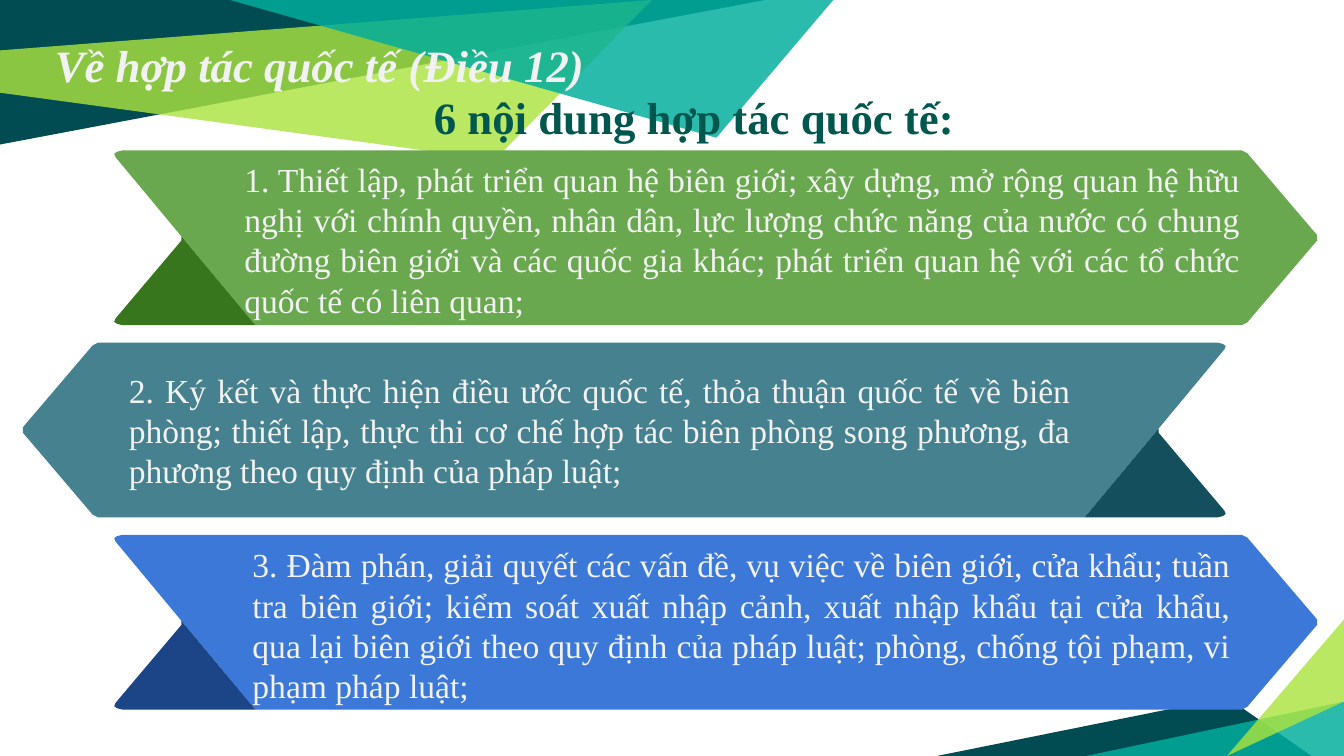
from lxml.etree import SubElement
from pptx import Presentation
from pptx.dml.color import RGBColor
from pptx.enum.text import PP_ALIGN
from pptx.oxml.ns import qn
from pptx.util import Inches, Pt

COLS, ROWS = 100, 56.25
CELL = Inches(0.1)
PINE = RGBColor(0x00, 0x4C, 0x52)
LIME = RGBColor(0xAB, 0xE3, 0x3F)
TEAL = RGBColor(0x00, 0xAE, 0x9D)
PALE = RGBColor(0xF2, 0xF2, 0xF2)
DEEP = RGBColor(0x00, 0x57, 0x4E)
GREEN = RGBColor(0x6A, 0xA8, 0x4F)
MOSS = RGBColor(0x38, 0x76, 0x1D)
SLATE = RGBColor(0x45, 0x81, 0x8E)
INK = RGBColor(0x13, 0x4F, 0x5C)
BLUE = RGBColor(0x3C, 0x78, 0xD8)
NAVY = RGBColor(0x1C, 0x45, 0x87)

DECOR = [
    (PINE, 100, [(0, 0), (0, 10.75), (56.9, 0)]),
    (LIME, 81, [(0, 3.75), (0, 6.9), (36.8, 11.9), (48.5, 0)]),
    (PINE, 100, [(69.7, ROWS), (97.6, ROWS), (91.3, 51.9)]),
    (TEAL, 83, [(COLS, 52.2), (COLS, ROWS), (80.8, ROWS)]),
    (LIME, 81, [(COLS, 52.2), (COLS, 46.1), (91.3, ROWS)]),
    (TEAL, 83, [(17.1, 0), (53.3, 10.25), (62, 0)]),
]
SPAN, TOP, PITCH = 89.6, 11.2, 14.3
ARROW = [(0.7, 0), (84, 0), (84.4, 0.2), (89.6, 6.3), (89.6, 6.7), (84.4, 12.8),
         (84, 13), (10.6, 13), (5.1, 6.4), (0.2, 0.5), (0.1, 0.25), (0.3, 0.1)]
FOLD = [(5.1, 6.7), (0.2, 12.5), (0.1, 12.75), (0.3, 12.9), (0.7, 13), (10.6, 13),
        (5.1, 6.4)]
BANDS = [
    (8.4, False, GREEN, MOSS, (17.2, 11.3, 76.1, 13.1),
     "1. Thiết lập, phát triển quan hệ biên giới; xây dựng, mở rộng quan hệ hữu nghị "
     "với chính quyền, nhân dân, lực lượng chức năng của nước có chung đường biên giới "
     "và các quốc gia khác; phát triển quan hệ với các tổ chức quốc tế có liên quan;"),
    (1.7, True, SLATE, INK, (8.6, 27, 72.1, 10.1),
     "2. Ký kết và thực hiện điều ước quốc tế, thỏa thuận quốc tế về biên phòng; "
     "thiết lập, thực thi cơ chế hợp tác biên phòng song phương, đa phương theo quy "
     "định của pháp luật;"),
    (8.4, False, BLUE, NAVY, (17.8, 40, 74.8, 13.1),
     "3. Đàm phán, giải quyết các vấn đề, vụ việc về biên giới, cửa khẩu; tuần tra "
     "biên giới; kiểm soát xuất nhập cảnh, xuất nhập khẩu tại cửa khẩu, qua lại biên "
     "giới theo quy định của pháp luật; phòng, chống tội phạm, vi phạm pháp luật;"),
]
BODY = {"name": "Times New Roman", "size": Pt(18)}
HEAD = {**BODY, "size": Pt(24), "bold": True}
TITLE = {**HEAD, "italic": True}


def grid(*cells):
    """Turn grid cells into slide lengths."""
    return [round(cell * CELL) for cell in cells]


def patch(slide, points, color, alpha=100):
    """Draw a filled outline through grid points."""
    first, *rest = [grid(*point) for point in points]
    pen = slide.shapes.build_freeform(*first)
    pen.add_line_segments(rest, close=True)
    shape = pen.convert_to_shape()
    shape.shadow.inherit = False
    shape.line.fill.background()
    shape.fill.solid()
    shape.fill.fore_color.rgb = color
    if alpha < 100:
        tint = shape.element.spPr.find(qn("a:solidFill"))[0]
        SubElement(tint, qn("a:alpha")).set("val", str(alpha * 1000))


def label(slide, box, text, style, color, align=PP_ALIGN.LEFT, inset=0.5):
    """Place a line or block of text on the grid."""
    frame = slide.shapes.add_textbox(*grid(*box)).text_frame
    edge, = grid(inset)
    look = {"word_wrap": True, "margin_top": edge, "margin_bottom": edge}
    for key, value in look.items():
        setattr(frame, key, value)
    para = frame.paragraphs[0]
    para.alignment = align
    run = para.add_run()
    run.text = text
    for key, value in style.items():
        setattr(run.font, key, value)
    run.font.color.rgb = color


def ribbon(slide, left, top, flip, face, back):
    """Draw an arrow band with its folded tail."""
    for form, color in ((ARROW, face), (FOLD, back)):
        points = [(left + (SPAN - x if flip else x), top + y) for x, y in form]
        patch(slide, points, color)


def main():
    """Build and save the slide."""
    deck = Presentation()
    deck.slide_width, deck.slide_height = grid(COLS, ROWS)
    slide = deck.slides.add_slide(deck.slide_layouts[6])
    for color, alpha, points in DECOR:
        patch(slide, points, color, alpha)
    label(slide, (3.1, 1.8, 42.3, 6.6), "Về hợp tác quốc tế (Điều 12)", TITLE, PALE,
          inset=1)
    for row, (left, flip, face, back, _, _) in enumerate(BANDS):
        ribbon(slide, left, TOP + row * PITCH, flip, face, back)
    label(slide, (31.3, 6.2, 41.4, 5), "6 nội dung hợp tác quốc tế:", HEAD, DEEP)
    for *_, box, text in BANDS:
        label(slide, box, text, BODY, PALE, PP_ALIGN.JUSTIFY)
    deck.save("out.pptx")


if __name__ == "__main__":
    main()
